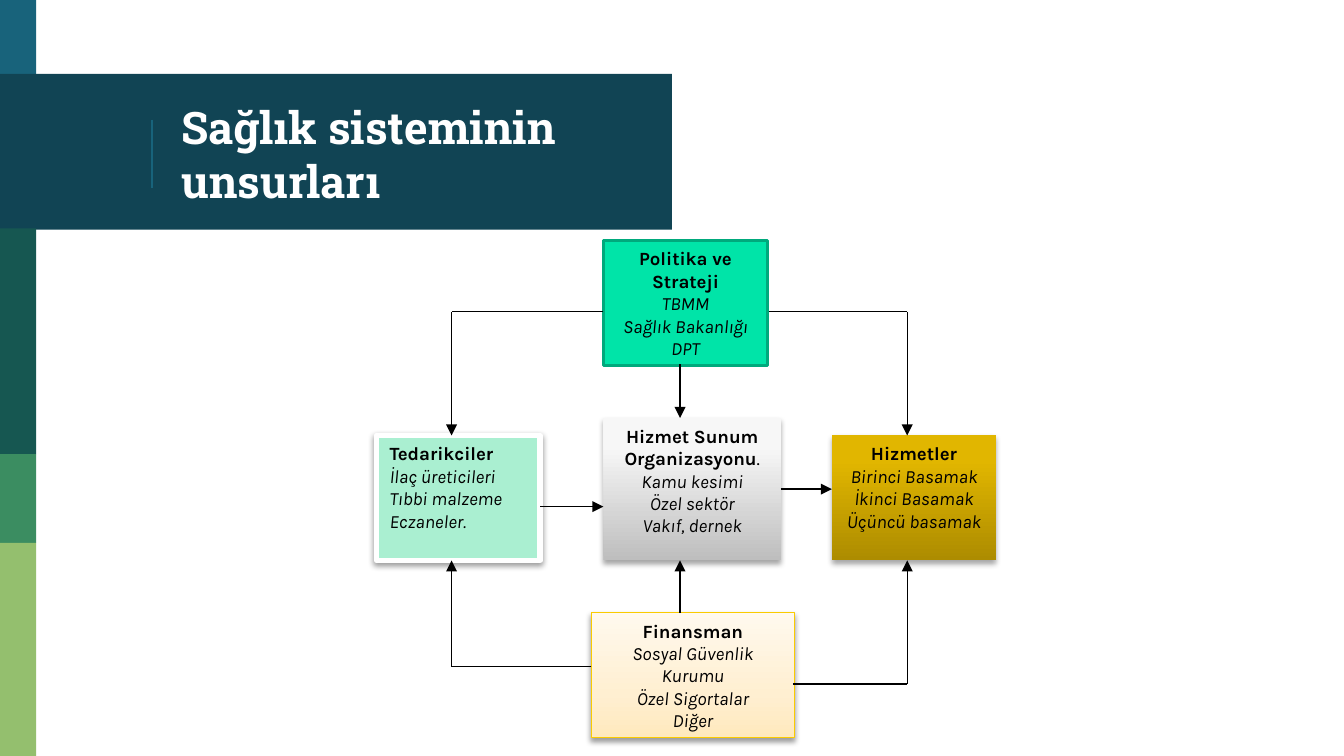
from lxml.etree import SubElement as Sub
from pptx import Presentation
from pptx.dml.color import RGBColor
from pptx.enum.shapes import MSO_CONNECTOR as MC, MSO_SHAPE as MS
from pptx.enum.text import MSO_ANCHOR as MA, PP_ALIGN as PA
from pptx.oxml.ns import qn
from pptx.util import Inches, Pt

TITLE = "Sağlık sisteminin unsurları"
BANDS = [
    ((0, 0, 0.27, 0.58), "18637B"),
    ((0, 0.55, 5, 1.16), "114454"),
    ((0, 1.7, 0.27, 1.68), "165751"),
    ((0, 3.38, 0.27, 0.66), "3B8D61"),
    ((0, 4.04, 0.27, 1.59), "94BF6E"),
]
CREAM = [(0, "FFE9BD"), (35, "FFEFD1"), (100, "FFF9EE")]
GREY = [(0, "BEBEBE"), (80, "F7F7F7"), (100, "F8F8F8")]
GOLD = [(0, "AD8C00"), (80, "E1B600"), (100, "E2B700")]
SOFT, DEEP = (38, 3.1, 1.6), (35, 3.1, 1.8)
BOXES = [
    dict(at=(4.49, 1.79, 1.22, 0.93), fill="00E4A8", line=("00A97C", 2),
         head="Politika ve Strateji", items=["TBMM", "Sağlık Bakanlığı", "DPT"]),
    dict(at=(4.4, 4.56, 1.51, 0.93), fill=CREAM, line=("FACB00", 0.75), shadow=SOFT,
         head="Finansman", items=["Sosyal Güvenlik Kurumu", "Özel Sigortalar", "Diğer"]),
    dict(at=(4.49, 3.11, 1.32, 1.06), fill=GREY, shadow=DEEP,
         head="Hizmet Sunum Organizasyonu", end=".",
         items=["Kamu kesimi", "Özel sektör", "Vakıf, dernek"]),
    dict(at=(2.8, 3.24, 1.22, 0.93), fill="AAEFD1", line=("FFFFFF", 3), shadow=SOFT,
         align=PA.LEFT, head="Tedarikciler",
         items=["İlaç üreticileri", "Tıbbi malzeme", "Eczaneler."]),
    dict(at=(6.19, 3.24, 1.22, 0.93), fill=GOLD, shadow=DEEP,
         head="Hizmetler", items=["Birinci Basamak", "İkinci Basamak", "Üçüncü basamak"]),
]
LEFT, MID, RIGHT = 3.36, 5.06, 6.75
ROUTES = [
    [(4.49, 2.32), (LEFT, 2.32), (LEFT, 3.24)],
    [(5.72, 2.32), (RIGHT, 2.32), (RIGHT, 3.24)],
    [(4.4, 4.96), (LEFT, 4.96), (LEFT, 4.17)],
    [(5.9, 5.09), (RIGHT, 5.09), (RIGHT, 4.17)],
    [(MID, 2.71), (MID, 3.11)],
    [(MID, 4.56), (MID, 4.17)],
    [(4.02, 3.77), (4.49, 3.77)],
    [(5.81, 3.64), (6.19, 3.64)],
]


def rgb(value):
    return RGBColor.from_string(value)


def add_run(p, text, color="000000", **fmt):
    r = p.add_run()
    r.text = text
    r.font.color.rgb = rgb(color)
    for name, value in {"name": "Karla", "size": Pt(10), **fmt}.items():
        setattr(r.font, name, value)


def set_gradient(sp, stops):
    sp.fill.gradient()
    sp.fill.gradient_angle = 90
    stop_list = sp._element.spPr.find(qn("a:gradFill")).find(qn("a:gsLst"))
    for old in list(stop_list):
        stop_list.remove(old)
    for pos, color in stops:
        stop = Sub(stop_list, qn("a:gs"), pos=str(pos * 1000))
        Sub(stop, qn("a:srgbClr"), val=color)


def set_shadow(sp, alpha, blur, dist):
    effects = sp._element.spPr.find(qn("a:effectLst"))
    outer = Sub(effects, qn("a:outerShdw"), blurRad=str(Pt(blur)), dist=str(Pt(dist)),
                dir="5400000", algn="ctr", rotWithShape="0")
    color = Sub(outer, qn("a:srgbClr"), val="000000")
    Sub(color, qn("a:alpha"), val=str(alpha * 1000))


def add_rect(s, at, fill, line=None, shadow=None):
    sp = s.shapes.add_shape(MS.RECTANGLE, *map(Inches, at))
    if isinstance(fill, str):
        sp.fill.solid()
        sp.fill.fore_color.rgb = rgb(fill)
    else:
        set_gradient(sp, fill)
    if line:
        sp.line.color.rgb, sp.line.width = rgb(line[0]), Pt(line[1])
    else:
        sp.line.fill.background()
    sp.shadow.inherit = False
    if shadow:
        set_shadow(sp, *shadow)
    return sp


def add_box(s, at, fill, head, items, line=None, shadow=None, align=PA.CENTER, end=""):
    tf = add_rect(s, at, fill, line, shadow).text_frame
    tf.word_wrap, tf.vertical_anchor = True, MA.TOP
    p = tf.paragraphs[0]
    p.alignment = align
    add_run(p, head, bold=True)
    if end:
        add_run(p, end)
    for item in items:
        p = tf.add_paragraph()
        p.alignment = align
        add_run(p, item, italic=True)


def add_line(s, start, stop, color="000000", arrow=False):
    cn = s.shapes.add_connector(MC.STRAIGHT, *map(Inches, start + stop))
    cn.line.color.rgb, cn.line.width = rgb(color), Pt(0.75)
    if arrow:
        Sub(cn.line._get_or_add_ln(), qn("a:tailEnd"), type="triangle")
    Sub(cn._element.spPr, qn("a:effectLst"))


def add_title(s):
    tf = s.shapes.add_textbox(*map(Inches, (1.25, 0.58, 3.51, 1.12))).text_frame
    tf.word_wrap, tf.vertical_anchor = True, MA.MIDDLE
    for side in ("left", "top", "right", "bottom"):
        setattr(tf, f"margin_{side}", Inches(0.1))
    add_run(tf.paragraphs[0], TITLE, "FFFFFF", name="Roboto Slab", size=Pt(24), bold=True)


def main():
    prs = Presentation()
    prs.slide_width = Inches(10)
    prs.slide_height = prs.slide_width * 9 // 16
    s = prs.slides.add_slide(prs.slide_layouts[6])
    for at, fill in BANDS:
        add_rect(s, at, fill)
    add_line(s, (1.13, 0.89), (1.13, 1.4), "18637B")
    add_title(s)
    for box in BOXES:
        add_box(s, **box)
    for route in ROUTES:
        for start, stop in zip(route, route[1:]):
            add_line(s, start, stop, arrow=stop == route[-1])
    prs.save("out.pptx")


if __name__ == "__main__":
    main()
